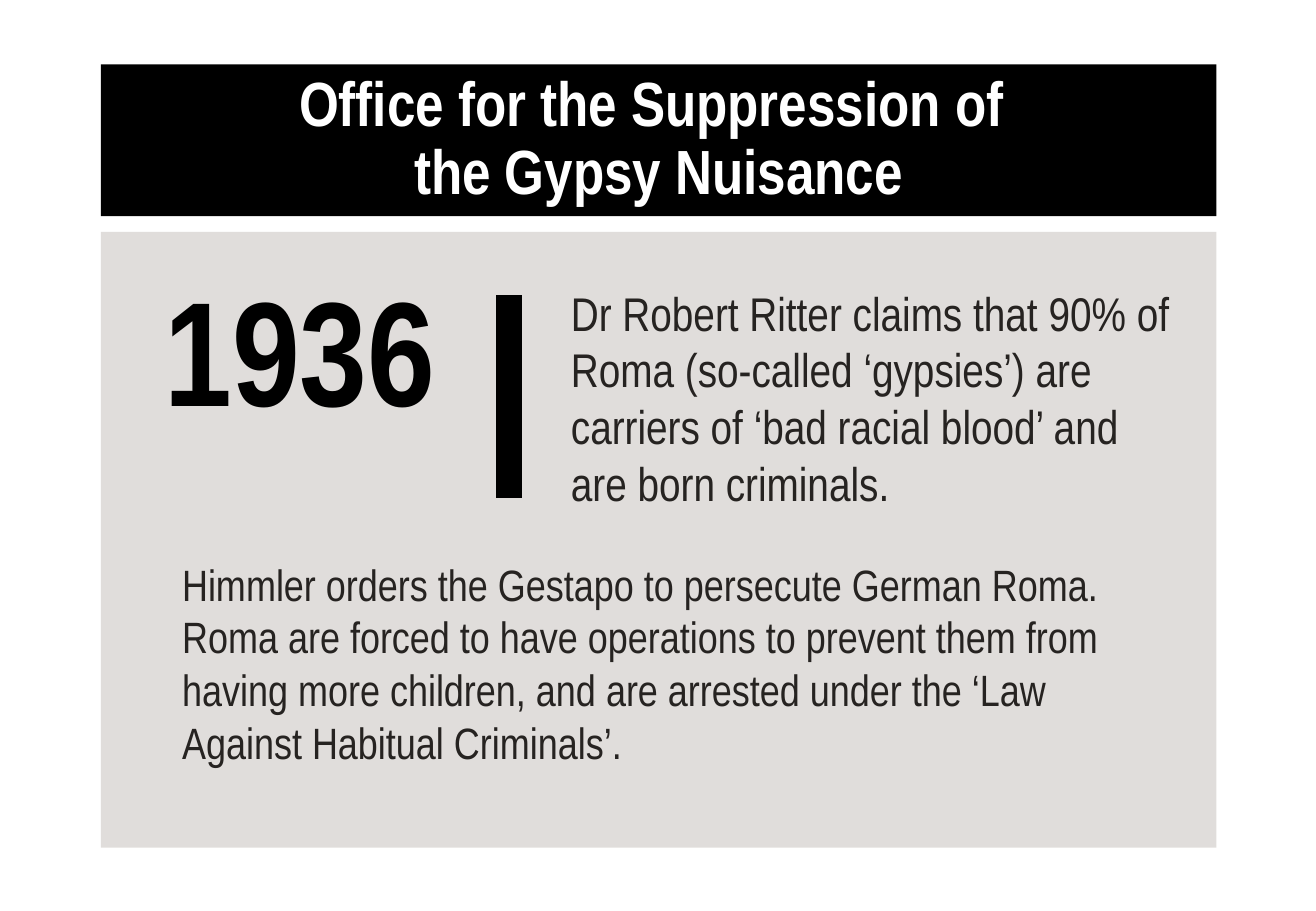
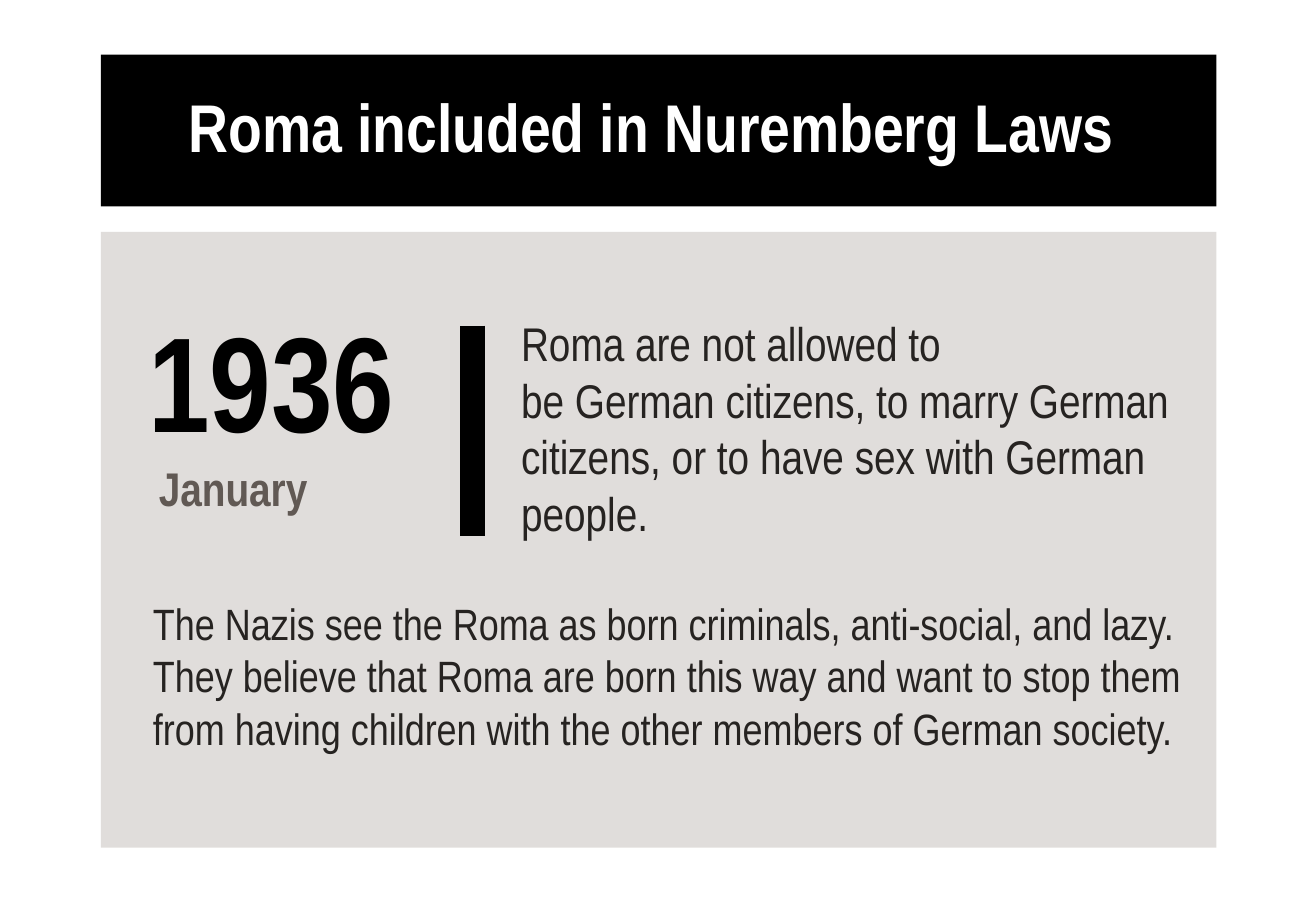
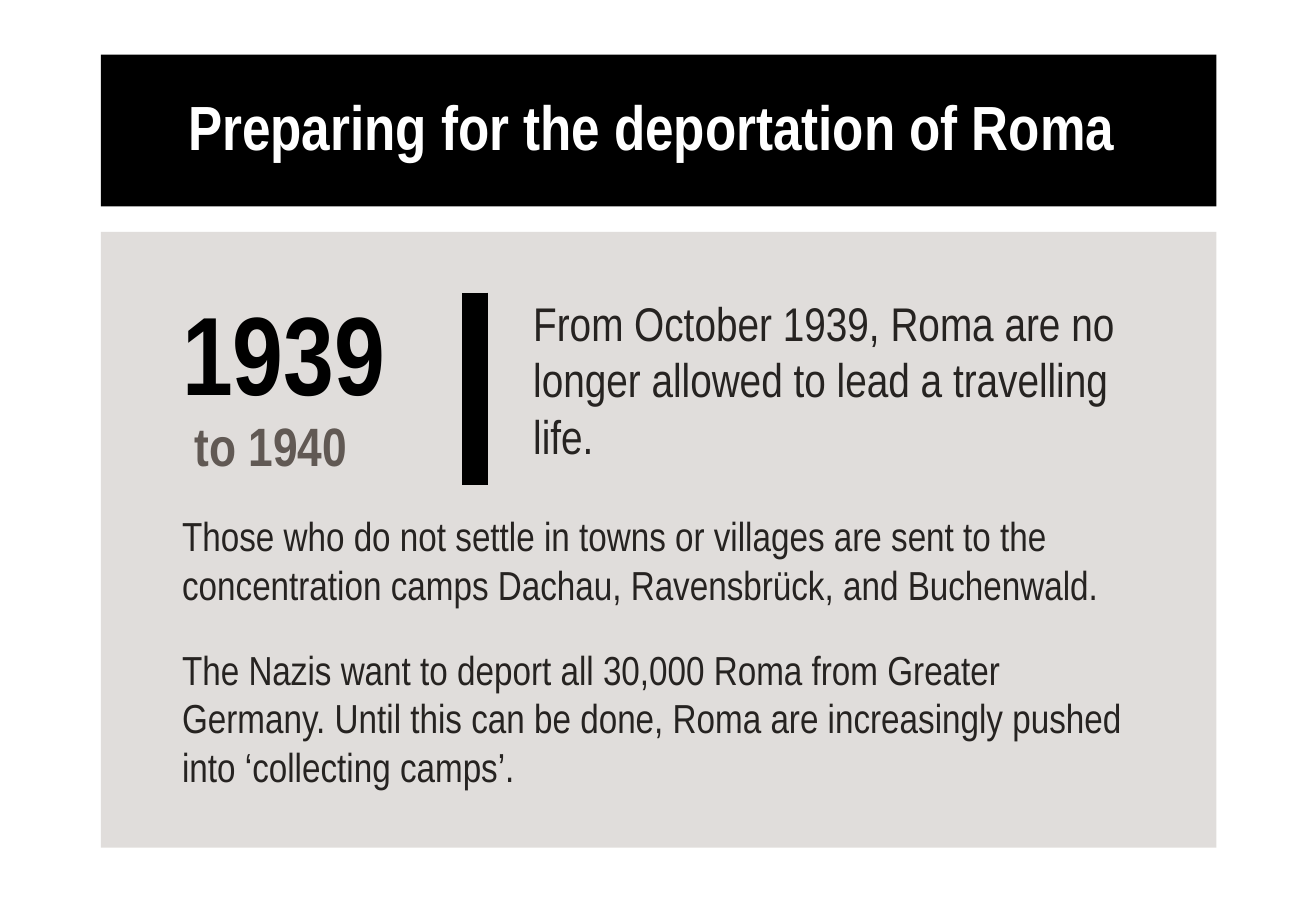
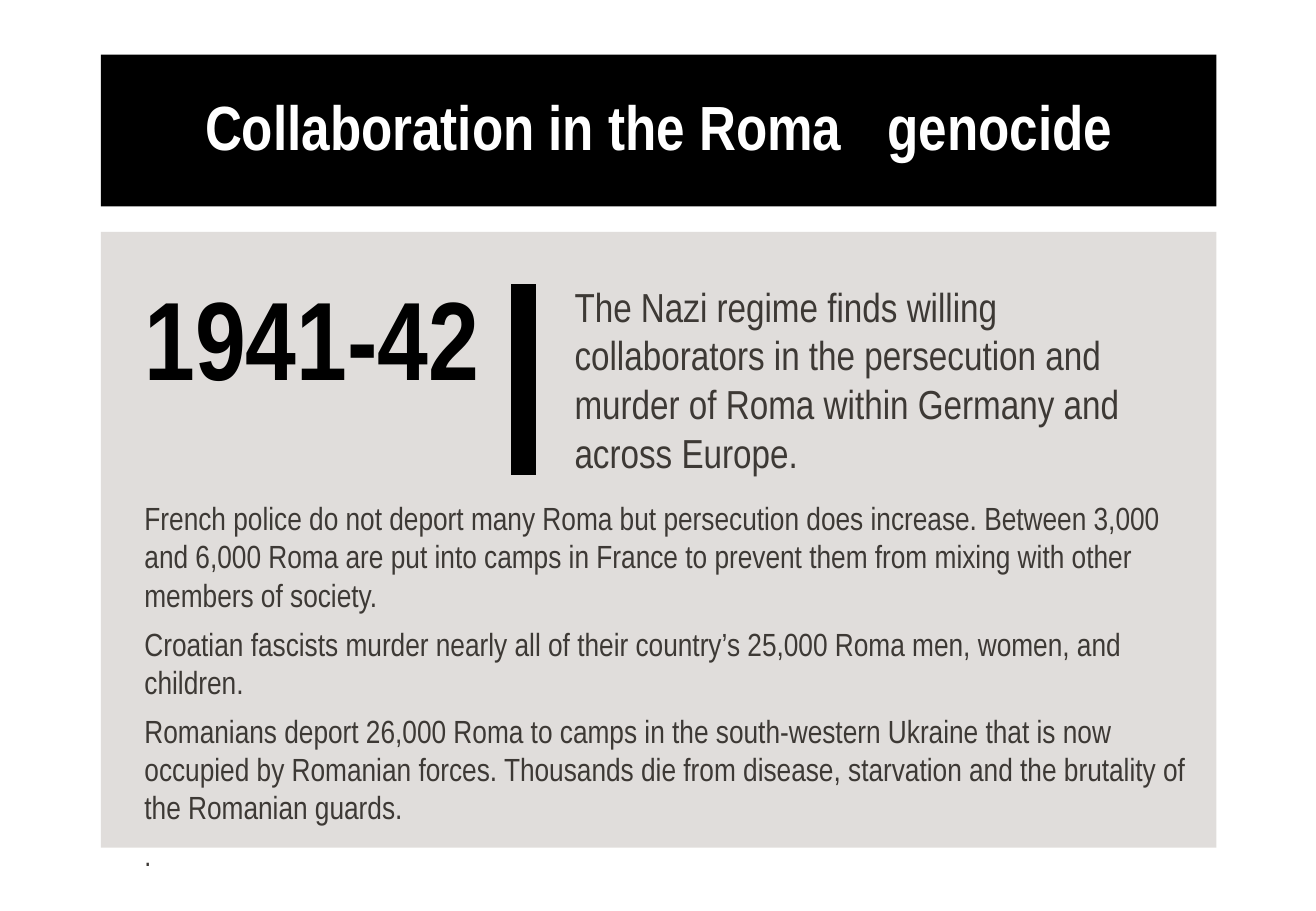
"""Builds four timeline cards on the persecution of the Roma."""
import lxml.etree
import pptx
import pptx.dml.color
import pptx.enum.shapes
import pptx.enum.text
import pptx.oxml.ns
import pptx.util

Inches = pptx.util.Inches
Pt = pptx.util.Pt
ALIGN = pptx.enum.text.PP_ALIGN
ANCHOR = pptx.enum.text.MSO_ANCHOR

FONT = "Arial Narrow"
COLORS = {"black": "000000", "white": "FFFFFF", "panel": "99908A",
          "text": "262321", "soft": "3D3935", "period": "615954"}
SLIDE_SIZE = (10.83, 7.5)
MARGIN, CARD_WIDTH = 0.83, 9.18
PANEL_TOP, PANEL_HEIGHT = 1.91, 5.07
BAND_TOP, BAND_HEIGHT = 0.45, 1.25
PANEL_ALPHA = 30
BAR_WEIGHT = 15

CARDS = [
    {
        "title": "Office for the Suppression of \nthe Gypsy Nuisance",
        "title_size": 37, "band_top": 0.53,
        "date": {"box": (1.24, 2.24, 2.44, 1.41), "lines": [("1936", 88, "black")],
                 "bold": True, "spacing": 0.9, "align": ALIGN.RIGHT},
        "bar": (4.19, 2.43, 4.1),
        "claim": {"box": (4.6, 2.33, 5.12, 1.88), "anchor": ANCHOR.MIDDLE, "lines": [
            ("Dr Robert Ritter claims that 90% of Roma (so-called ‘gypsies’) are "
             "carriers of ‘bad racial blood’ and are born criminals.", 28, "text")]},
        "story": {"box": (1.4, 4.54, 8.01, 1.85), "lines": [
            ("Himmler orders the Gestapo to persecute German Roma. Roma are forced to "
             "have operations to prevent them from having more children, and are "
             "arrested under the ‘Law Against Habitual Criminals’.", 26, "text")]},
    },
    {
        "title": "Roma included in Nuremberg Laws ", "title_size": 40,
        "date": {"box": (1.12, 2.41, 2.52, 1.88), "anchor": ANCHOR.MIDDLE, "bold": True,
                 "lines": [("1936", 80, "black"), (" January", 28, "period")]},
        "bar": (3.89, 2.68, 4.41),
        "claim": {"box": (4.19, 2.58, 5.67, 1.88), "anchor": ANCHOR.MIDDLE, "lines": [
            ("Roma are not allowed to", 28, "text"),
            ("be German citizens, to marry German citizens, or to have sex with "
             "German people.", 28, "text")]},
        "story": {"box": (1.16, 4.62, 8.74, 1.88), "anchor": ANCHOR.MIDDLE, "lines": [
            ("The Nazis see the Roma as born criminals, anti-social, and lazy. They "
             "believe that Roma are born this way and want to stop them from having "
             "children with the other members of German society.", 26, "text")]},
    },
    {
        "title": "Preparing for the deportation of Roma ", "title_size": 37,
        "date": {"box": (1.4, 2.26, 2.44, 1.88), "anchor": ANCHOR.MIDDLE, "bold": True,
                 "spacing": 0.9,
                 "lines": [("1939", 66, "black"), (" to 1940", 32, "period")]},
        "bar": (3.91, 2.41, 3.99),
        "claim": {"box": (4.29, 2.18, 5.3, 1.88), "anchor": ANCHOR.MIDDLE, "lines": [
            ("From October 1939, Roma are no longer allowed to lead a travelling life.",
             28, "text")]},
        "story": {"box": (1.4, 4.16, 8.11, 2.42), "after": 21.5, "lines": [
            ("Those who do not settle in towns or villages are sent to the "
             "concentration camps Dachau, Ravensbrück, and Buchenwald.", 24, "text"),
            ("The Nazis want to deport all 30,000 Roma from Greater Germany. Until this "
             "can be done, Roma are increasingly pushed into ‘collecting camps’.",
             24, "text")]},
    },
    {
        "title": "Collaboration in the Roma\t genocide", "title_size": 37,
        "date": {"box": (1.09, 2.29, 3.07, 1.88), "lines": [("1941-42", 66, "black")],
                 "bold": True, "spacing": 0.9},
        "bar": (4.31, 2.34, 3.91),
        "claim": {"box": (4.63, 2.18, 4.8, 1.88), "anchor": ANCHOR.MIDDLE, "lines": [
            ("The Nazi regime finds willing collaborators in the persecution and murder "
             "of Roma within Germany and across Europe.", 24, "soft")]},
        "story": {"box": (1.09, 4.37, 8.92, 2.55), "anchor": ANCHOR.MIDDLE, "after": 6,
                  "lines": [
            ("French police do not deport many Roma but persecution does increase. "
             "Between 3,000 and 6,000 Roma are put into camps in France to prevent them "
             "from mixing with other members of society.", 19, "soft"),
            ("Croatian fascists murder nearly all of their country’s 25,000 Roma men, "
             "women, and children.", 19, "soft"),
            ("Romanians deport 26,000 Roma to camps in the south-western Ukraine that is "
             "now occupied by Romanian forces. Thousands die from disease, starvation "
             "and the brutality of the Romanian guards.", 19, "soft"),
            (".", 18, "soft")]},
    },
]


def rgb(name):
    return pptx.dml.color.RGBColor.from_string(COLORS[name])


def write(frame, lines, bold=False, align=ALIGN.LEFT, anchor=ANCHOR.TOP,
          spacing=None, after=0):
    frame.word_wrap = True
    frame.vertical_anchor = anchor
    for index, (text, size, color) in enumerate(lines):
        paragraph = frame.add_paragraph() if index else frame.paragraphs[0]
        paragraph.text = text
        paragraph.alignment = align
        paragraph.line_spacing = spacing
        paragraph.space_after = Pt(after)
        font = paragraph.font
        font.name, font.size, font.bold = FONT, Pt(size), bold
        font.color.rgb = rgb(color)


def add_block(slide, top, height, color):
    block = slide.shapes.add_shape(
        pptx.enum.shapes.MSO_SHAPE.RECTANGLE,
        *map(Inches, (MARGIN, top, CARD_WIDTH, height)))
    block.shadow.inherit = False
    block.line.fill.background()
    block.fill.solid()
    block.fill.fore_color.rgb = rgb(color)
    return block


def add_panel(slide):
    panel = add_block(slide, PANEL_TOP, PANEL_HEIGHT, "panel")
    qn = pptx.oxml.ns.qn
    tint = panel.fill._xPr.find(qn("a:solidFill")).find(qn("a:srgbClr"))
    lxml.etree.SubElement(tint, qn("a:alpha"), val=str(PANEL_ALPHA * 1000))


def add_bar(slide, x, top, bottom):
    bar = slide.shapes.add_connector(
        pptx.enum.shapes.MSO_CONNECTOR.STRAIGHT,
        *map(Inches, (x, top, x, bottom)))
    bar.line.width = Pt(BAR_WEIGHT)
    bar.line.color.rgb = rgb("black")
    lxml.etree.SubElement(bar._element.spPr, pptx.oxml.ns.qn("a:effectLst"))


def add_text(slide, box, **style):
    write(slide.shapes.add_textbox(*map(Inches, box)).text_frame, **style)


def build_card(slide, card):
    add_panel(slide)
    add_text(slide, **card["date"])
    add_bar(slide, *card["bar"])
    add_text(slide, **card["claim"])
    band = add_block(slide, card.get("band_top", BAND_TOP), BAND_HEIGHT, "black")
    write(band.text_frame, [(card["title"], card["title_size"], "white")], bold=True,
          align=ALIGN.CENTER, anchor=ANCHOR.MIDDLE, spacing=0.9)
    add_text(slide, **card["story"])


def main():
    deck = pptx.Presentation()
    deck.slide_width, deck.slide_height = map(Inches, SLIDE_SIZE)
    for card in CARDS:
        build_card(deck.slides.add_slide(deck.slide_layouts[6]), card)
    deck.save("out.pptx")


if __name__ == "__main__":
    main()
